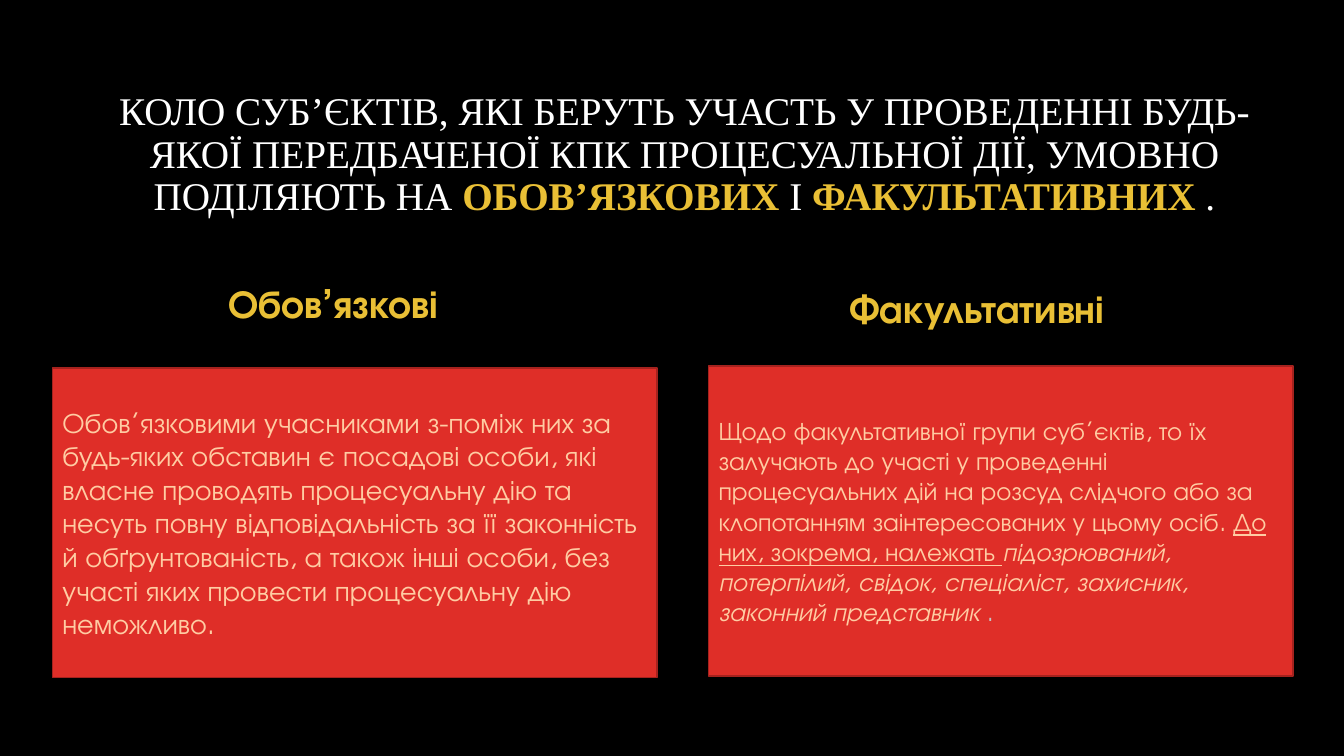
"""Build a slide comparing mandatory and optional participants of a procedural action."""
from dataclasses import dataclass

from pptx import Presentation
from pptx.dml.color import RGBColor
from pptx.enum.shapes import MSO_SHAPE
from pptx.enum.text import MSO_ANCHOR, MSO_AUTO_SIZE, PP_ALIGN
from pptx.shapes.autoshape import Shape
from pptx.slide import Slide
from pptx.util import Cm, Pt

RECTANGLE = MSO_SHAPE.RECTANGLE
MIDDLE, BOTTOM = MSO_ANCHOR.MIDDLE, MSO_ANCHOR.BOTTOM
LEFT, CENTER = PP_ALIGN.LEFT, PP_ALIGN.CENTER
NO_AUTOFIT = MSO_AUTO_SIZE.NONE

BLACK = RGBColor(0x00, 0x00, 0x00)
WHITE = RGBColor(0xFF, 0xFF, 0xFF)
GOLD = RGBColor(0xE9, 0xBF, 0x35)
RED = RGBColor(0xDF, 0x2E, 0x28)
DARK_RED = RGBColor(0xA5, 0x22, 0x1E)
PEACH = RGBColor(0xFF, 0xCC, 0xA3)
GRAY = RGBColor(0xC4, 0xC4, 0xC4)

SERIF = "Times New Roman"
SANS = "TeX Gyre Adventor"


@dataclass(frozen=True)
class TextRun:
    text: str
    color: RGBColor
    bold: bool = False
    italic: bool = False
    underline: bool = False


@dataclass(frozen=True)
class TextBlock:
    left: float
    top: float
    width: float
    height: float
    size: int
    runs: tuple[TextRun, ...]
    font: str = SANS
    anchor: MSO_ANCHOR = MIDDLE
    align: PP_ALIGN = CENTER
    line_spacing: float = 0.9
    right_inset: float = 0.25


TITLE = TextBlock(2.54, 2.11, 29.41, 3.61, 28, (
    TextRun("КОЛО СУБ’ЄКТІВ, ЯКІ БЕРУТЬ УЧАСТЬ У ПРОВЕДЕННІ БУДЬ-ЯКОЇ ПЕРЕДБАЧЕНОЇ КПК "
            "ПРОЦЕСУАЛЬНОЇ ДІЇ, УМОВНО ПОДІЛЯЮТЬ НА ", WHITE),
    TextRun("ОБОВ’ЯЗКОВИХ", GOLD, bold=True),
    TextRun(" І ", WHITE),
    TextRun("ФАКУЛЬТАТИВНИХ", GOLD, bold=True),
    TextRun(" .", WHITE),
), font=SERIF)

HEADINGS = {
    1: TextBlock(2.54, 6.07, 14.12, 2.29, 28, (TextRun("Обов’язкові", GOLD, bold=True),),
                 anchor=BOTTOM, right_inset=2.64),
    3: TextBlock(17.53, 6.2, 14.17, 2.29, 28, (TextRun("Факультативні", GOLD, bold=True),),
                 anchor=BOTTOM),
}

PANELS = (
    TextBlock(1.32, 9.27, 15.24, 7.8, 20, (
        TextRun("Обов’язковими учасниками з-поміж них за будь-яких обставин є посадові особи, "
                "які власне проводять процесуальну дію та несуть повну відповідальність за її "
                "законність й обґрунтованість, а також інші особи, без участі яких провести "
                "процесуальну дію неможливо.", PEACH),
    ), align=LEFT, line_spacing=1.0),
    TextBlock(17.86, 9.22, 14.73, 7.82, 18, (
        TextRun("Щодо факультативної групи суб’єктів, то їх залучають до участі у проведенні "
                "процесуальних дій на розсуд слідчого або за клопотанням заінтересованих у "
                "цьому осіб. ", PEACH),
        TextRun("До них, зокрема, належать ", PEACH, underline=True),
        TextRun("підозрюваний, потерпілий, свідок, спеціаліст, захисник, законний "
                "представник ", PEACH, italic=True),
        TextRun(".", GRAY),
    ), align=LEFT, line_spacing=1.0),
)


def fill_text(shape: Shape, block: TextBlock) -> None:
    """Write the block's runs into the shape."""
    frame = shape.text_frame
    frame.word_wrap = True
    frame.auto_size = NO_AUTOFIT
    frame.vertical_anchor = block.anchor
    frame.margin_right = Cm(block.right_inset)
    paragraph = frame.paragraphs[0]
    paragraph.alignment = block.align
    paragraph.line_spacing = block.line_spacing
    paragraph.space_before = Pt(0)
    for text_run in block.runs:
        run = paragraph.add_run()
        run.text = text_run.text
        font = run.font
        font.name = block.font
        font.size = Pt(block.size)
        font.bold = text_run.bold
        font.italic = text_run.italic
        font.underline = text_run.underline
        font.color.rgb = text_run.color


def place_placeholder(placeholder: Shape, block: TextBlock) -> None:
    """Move a placeholder to the block's place and fill it."""
    placeholder.left, placeholder.top = Cm(block.left), Cm(block.top)
    placeholder.width, placeholder.height = Cm(block.width), Cm(block.height)
    fill_text(placeholder, block)


def add_panel(slide: Slide, block: TextBlock) -> None:
    """Add a red panel with its text."""
    panel = slide.shapes.add_shape(
        RECTANGLE, Cm(block.left), Cm(block.top), Cm(block.width), Cm(block.height))
    panel.shadow.inherit = False
    panel.fill.solid()
    panel.fill.fore_color.rgb = RED
    panel.line.color.rgb = DARK_RED
    panel.line.width = Pt(1)
    fill_text(panel, block)


def main() -> None:
    """Build and save the presentation."""
    presentation = Presentation()
    presentation.slide_width, presentation.slide_height = Cm(33.87), Cm(19.05)
    comparison_layout = presentation.slide_layouts.get_by_name("Comparison")
    slide = presentation.slides.add_slide(comparison_layout)
    slide.background.fill.solid()
    slide.background.fill.fore_color.rgb = BLACK

    blocks = {0: TITLE, **HEADINGS}
    for placeholder in list(slide.placeholders):
        index = placeholder.placeholder_format.idx
        if index in blocks:
            place_placeholder(placeholder, blocks[index])
        else:
            placeholder.element.getparent().remove(placeholder.element)
    for panel in PANELS:
        add_panel(slide, panel)
    presentation.save("out.pptx")


if __name__ == "__main__":
    main()
